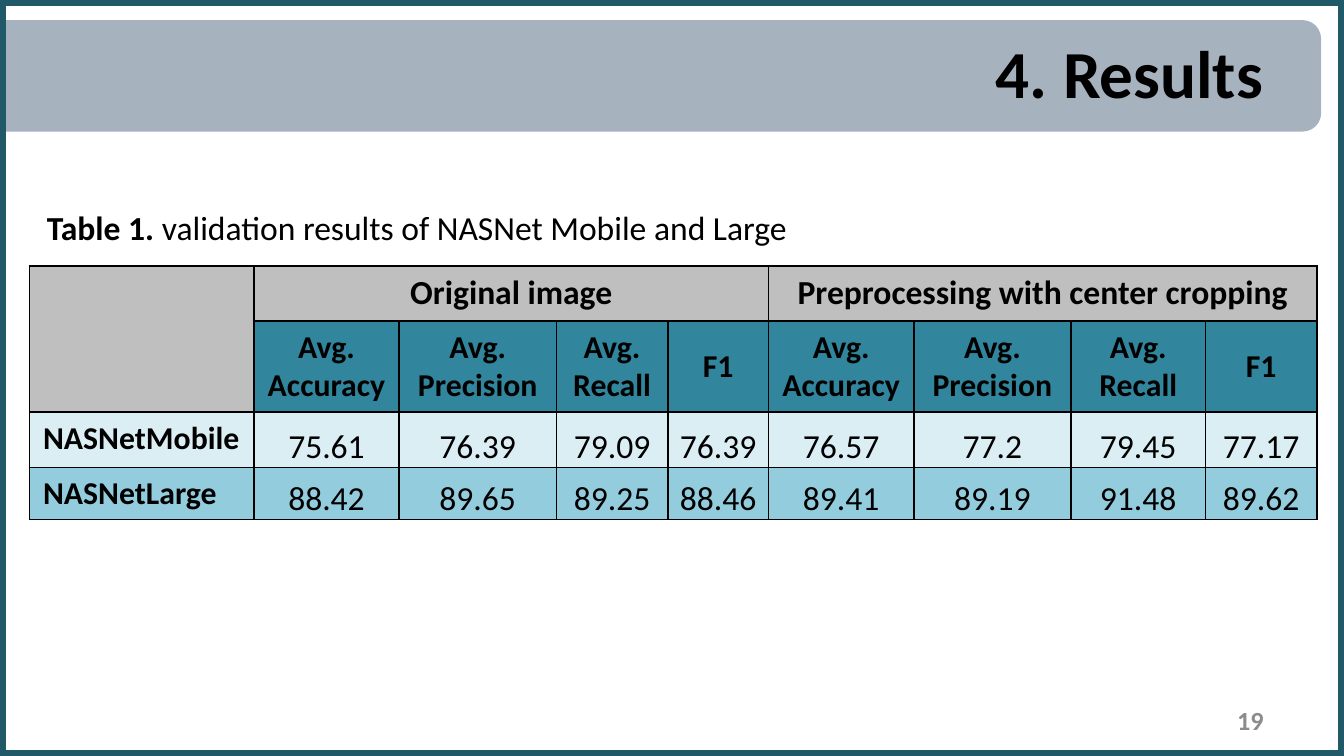
from lxml.etree import SubElement
from pptx import Presentation
from pptx.dml.color import RGBColor
from pptx.enum.shapes import MSO_SHAPE
from pptx.enum.text import MSO_ANCHOR, MSO_AUTO_SIZE, PP_ALIGN
from pptx.oxml.ns import qn
from pptx.util import Inches, Pt

BLACK = RGBColor(0x00, 0x00, 0x00)
NAVY = RGBColor(0x25, 0x40, 0x61)
FRAME_TEAL = RGBColor(0x21, 0x59, 0x68)
PAGE_GRAY = RGBColor(0x8C, 0x8C, 0x8C)
GROUP_GRAY = RGBColor(0xBF, 0xBF, 0xBF)
METRIC_TEAL = RGBColor(0x31, 0x85, 0x9C)
ROW_FILLS = [RGBColor(0xDB, 0xEE, 0xF4), RGBColor(0x93, 0xCD, 0xDD)]

WIDTH = 10
HEIGHT = WIDTH * 9 / 16
COLUMN_WIDTHS = [1.67, 1.08, 1.17, 0.83, 0.75, 1.08, 1.17, 1, 0.83]
ROW_HEIGHTS = [0.41, 0.41, 0.41, 0.27]
GROUPS = ["Original image", "Preprocessing with center cropping"]
METRICS = ["Avg.\nAccuracy", "Avg.\nPrecision", "Avg.\nRecall", "F1"]
RESULTS = {
    "NASNetMobile": ["75.61", "76.39", "79.09", "76.39",
                     "76.57", "77.2", "79.45", "77.17"],
    "NASNetLarge": ["88.42", "89.65", "89.25", "88.46",
                    "89.41", "89.19", "91.48", "89.62"],
}


def write_text(frame, text, size=18, color=BLACK, bold=False, bold_lead="",
               align=PP_ALIGN.LEFT):
    """Fill a text frame, one paragraph a line, after an optional bold lead."""
    for index, line in enumerate(text.split("\n")):
        paragraph = frame.paragraphs[0] if index == 0 else frame.add_paragraph()
        paragraph.alignment = align
        parts = [(line, bold)]
        if bold_lead and index == 0:
            parts.insert(0, (bold_lead, True))
        for part, is_bold in parts:
            run = paragraph.add_run()
            run.text = part
            run.font.name = "Calibri"
            run.font.size = Pt(size)
            run.font.bold = is_bold
            run.font.color.rgb = color


def add_text_box(slide, box, text, anchor=MSO_ANCHOR.TOP, **text_format):
    frame = slide.shapes.add_textbox(*map(Inches, box)).text_frame
    frame.word_wrap = True
    frame.vertical_anchor = anchor
    write_text(frame, text, **text_format)


def add_title_bar(slide, box, text):
    left, top, width, height = box
    bar = slide.shapes.add_shape(MSO_SHAPE.ROUNDED_RECTANGLE, *map(Inches, box))
    bar.shadow.inherit = False
    bar.line.fill.background()
    bar.fill.solid()
    bar.fill.fore_color.rgb = NAVY
    color = bar.element.spPr.find(qn("a:solidFill"))[0]
    SubElement(color, qn("a:alpha"), val="40000")

    title = slide.shapes.title
    title.element.addprevious(bar.element)
    title.left, title.top = Inches(left + 0.92), Inches(top - 0.09)
    title.width, title.height = Inches(width - 1.25), Inches(height + 0.11)
    title.text_frame.auto_size = MSO_AUTO_SIZE.NONE
    title.text_frame.vertical_anchor = MSO_ANCHOR.MIDDLE
    write_text(title.text_frame, text, size=36, bold=True, align=PP_ALIGN.RIGHT)


def style_cell(cell, fill):
    """Give a cell thin black borders and a plain fill."""
    properties = cell._tc.get_or_add_tcPr()
    for side in ("a:lnL", "a:lnR", "a:lnT", "a:lnB"):
        border = SubElement(properties, qn(side), w=str(Pt(1)))
        solid = SubElement(border, qn("a:solidFill"))
        SubElement(solid, qn("a:srgbClr"), val=str(BLACK))
    cell.fill.solid()
    cell.fill.fore_color.rgb = fill


def add_results_table(slide, box):
    graphic = slide.shapes.add_table(
        len(ROW_HEIGHTS), len(COLUMN_WIDTHS), *map(Inches, box))
    table = graphic.table
    for column, width in zip(table.columns, COLUMN_WIDTHS):
        column.width = Inches(width)
    for row, height in zip(table.rows, ROW_HEIGHTS):
        row.height = Inches(height)
    for row, fill in zip(table.rows, [GROUP_GRAY, METRIC_TEAL] + ROW_FILLS):
        for cell in row.cells:
            style_cell(cell, fill)

    table.cell(0, 0).merge(table.cell(1, 0))
    for index, group in enumerate(GROUPS):
        first = 1 + index * len(METRICS)
        cell = table.cell(0, first)
        cell.merge(table.cell(0, first + len(METRICS) - 1))
        write_text(cell.text_frame, group, bold=True, align=PP_ALIGN.CENTER)
    for column, metric in enumerate(METRICS * len(GROUPS), start=1):
        cell = table.cell(1, column)
        cell.vertical_anchor = MSO_ANCHOR.MIDDLE
        write_text(cell.text_frame, metric, size=17, bold=True,
                   align=PP_ALIGN.CENTER)
    for row, (model, values) in enumerate(RESULTS.items(), start=2):
        write_text(table.cell(row, 0).text_frame, model, size=17, bold=True)
        for column, value in enumerate(values, start=1):
            cell = table.cell(row, column)
            cell.vertical_anchor = MSO_ANCHOR.BOTTOM
            cell.margin_left = cell.margin_right = cell.margin_top = Inches(0.01)
            cell.margin_bottom = 0
            write_text(cell.text_frame, value, align=PP_ALIGN.CENTER)
    graphic.height = Inches(box[3])


def add_slide_frame(slide, box):
    frame = slide.shapes.add_shape(MSO_SHAPE.RECTANGLE, *map(Inches, box))
    frame.shadow.inherit = False
    frame.fill.background()
    frame.line.color.rgb = FRAME_TEAL
    frame.line.width = Pt(6)


def main():
    presentation = Presentation()
    presentation.slide_width = Inches(WIDTH)
    presentation.slide_height = Inches(HEIGHT)
    slide = presentation.slides.add_slide(presentation.slide_layouts[5])

    add_title_bar(slide, (-0.42, 0.15, 10.25, 0.83), "4. Results")
    add_results_table(slide, (0.22, 1.98, 9.58, 1.86))
    add_slide_frame(slide, (0, 0, WIDTH, HEIGHT))
    add_text_box(slide, (0.25, 1.49, 6.67, 0.4),
                 "validation results of NASNet Mobile and Large",
                 bold_lead="Table 1. ")
    add_text_box(slide, (7.17, 5.21, 2.33, 0.3), "19", MSO_ANCHOR.MIDDLE,
                 size=14, color=PAGE_GRAY, bold=True, align=PP_ALIGN.RIGHT)
    presentation.save("out.pptx")


if __name__ == "__main__":
    main()
